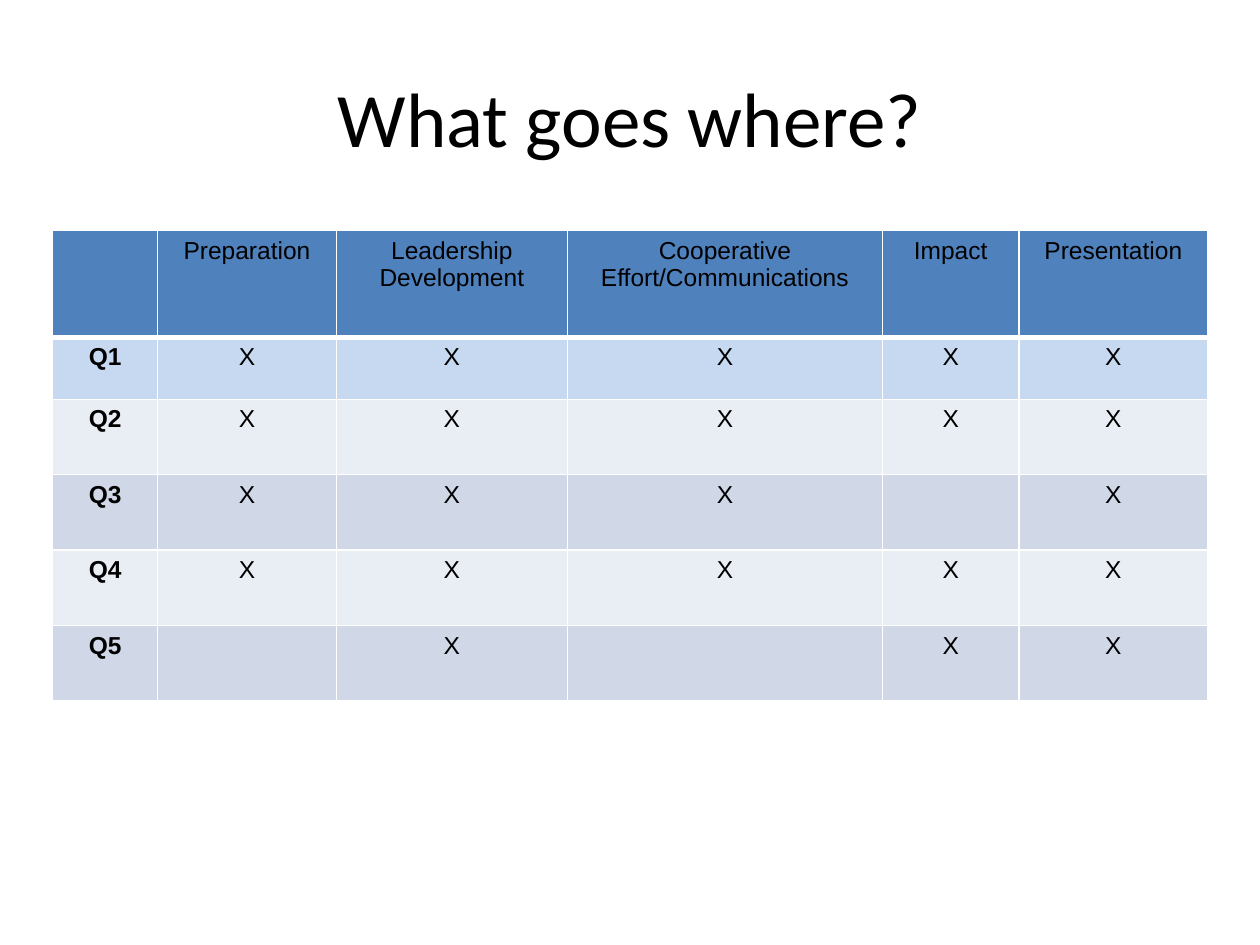
from lxml import etree
from pptx import Presentation
from pptx import util as u
from pptx.dml.color import RGBColor
from pptx.enum import text
from pptx.oxml.ns import qn

COLOURS = {
    "ink": "000000",
    "rule": "FFFFFF",
    "header": "4F81BD",
    "first": "C6D9F1",
    "light": "E9EDF4",
    "dark": "D0D8E8",
}
HEADINGS = ["", "Preparation", "Leadership Development",
            "Cooperative Effort/Communications", "Impact", "Presentation"]
MARKS = {"Q1": "XXXXX", "Q2": "XXXXX", "Q3": "XXX X",
         "Q4": "XXXXX", "Q5": " X XX"}
BANDS = ["header", "first", "light", "dark", "light", "dark"]
COLUMN_WIDTHS = [2.12, 3.6, 4.66, 6.35, 2.75, 3.81]
ROW_HEIGHTS = [2.15, 1.25] + [1.52] * 4


class SlideBuilder:
    title_font = {"name": "Calibri", "size": u.Pt(44), "bold": False}
    cell_font = {"name": "Arial", "size": u.Pt(14)}

    def __init__(self, deck):
        self.page = deck.slides.add_slide(deck.slide_layouts[5])

    def add_text(self, frame, wording, **font):
        para = frame.paragraphs[0]
        para.alignment = text.PP_ALIGN.CENTER
        span = para.add_run()
        span.text = wording
        for name, value in font.items():
            setattr(span.font, name, value)
        span.font.color.rgb = RGBColor.from_string(COLOURS["ink"])

    def title(self, wording, left, top, width, height):
        box = self.page.shapes.title
        place = {"left": left, "top": top, "width": width, "height": height}
        for name, value in place.items():
            setattr(box, name, u.Cm(value))
        box.text_frame.vertical_anchor = text.MSO_ANCHOR.MIDDLE
        self.add_text(box.text_frame, wording, **self.title_font)

    def border(self, cell, bottom):
        properties = cell._tc.get_or_add_tcPr()
        for side, points in {"L": 1, "R": 1, "T": 1, "B": bottom}.items():
            line = etree.SubElement(properties, qn(f"a:ln{side}"), w=str(u.Pt(points)))
            fill = etree.SubElement(line, qn("a:solidFill"))
            etree.SubElement(fill, qn("a:srgbClr"), val=COLOURS["rule"])

    def table(self, rows, left, top):
        size = [u.Cm(sum(COLUMN_WIDTHS)), u.Cm(sum(ROW_HEIGHTS))]
        grid = self.page.shapes.add_table(
            len(rows), len(COLUMN_WIDTHS), u.Cm(left), u.Cm(top), *size).table
        for column, width in zip(grid.columns, COLUMN_WIDTHS):
            column.width = u.Cm(width)
        for row, height in zip(grid.rows, ROW_HEIGHTS):
            row.height = u.Cm(height)
        for r, wordings in enumerate(rows):
            for c, wording in enumerate(wordings):
                cell = grid.cell(r, c)
                self.border(cell, bottom=3 if r == 0 else 1)
                cell.fill.solid()
                cell.fill.fore_color.rgb = RGBColor.from_string(COLOURS[BANDS[r]])
                if wording.strip():
                    self.add_text(cell.text_frame, wording,
                                  bold=r > 0 and c == 0, **self.cell_font)


def main():
    deck = Presentation()
    deck.slide_width, deck.slide_height = u.Cm(25.4), u.Cm(19.05)
    builder = SlideBuilder(deck)
    builder.title("What goes where?", 1.27, 0.76, 22.86, 3.18)
    rows = [HEADINGS] + [[question, *marks] for question, marks in MARKS.items()]
    builder.table(rows, 1.06, 4.65)
    deck.save("out.pptx")


if __name__ == "__main__":
    main()
